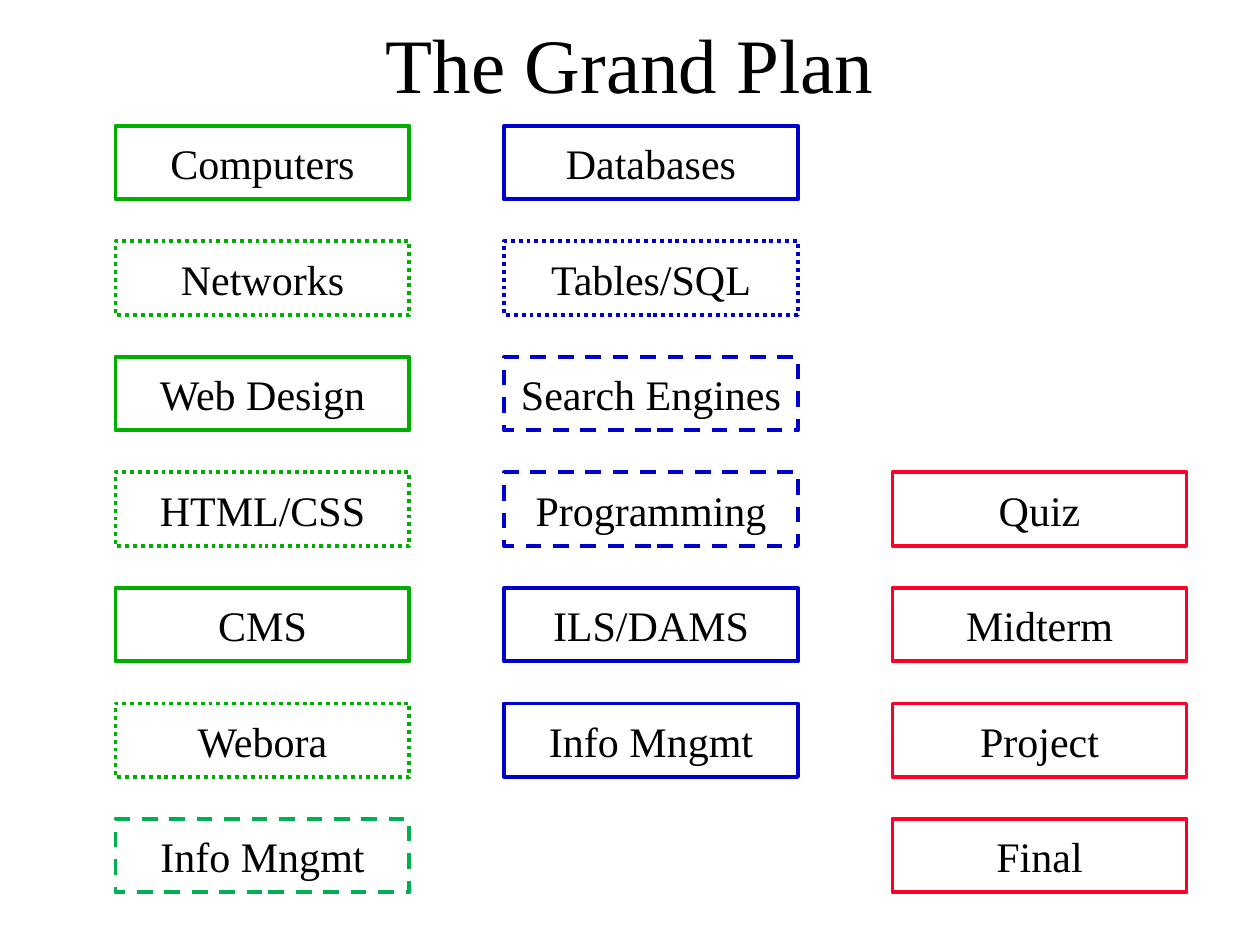
from pptx import Presentation
from pptx.dml.color import RGBColor
from pptx.enum.dml import MSO_LINE_DASH_STYLE as Dash
from pptx.enum.shapes import MSO_SHAPE as Shape
from pptx.enum.text import MSO_ANCHOR as Anchor, PP_ALIGN as Align
from pptx.util import Emu, Pt

PX = 7620  # EMU per px, 120 px to the inch
FONT = "Times New Roman"
COLORS = {
    "text": "000000",
    "green": "00AE00",
    "next": "00B050",
    "blue": "0000CC",
    "red": "FC0128",
}
DASHES = {"solid": None, "dot": Dash.ROUND_DOT, "dash": Dash.DASH}

TITLE_BOX = (90, 20, 1020, 80)
BOX_W, BOX_H = 280, 70
ROW_STEP = 110

# Each column: area on the slide, then its topics as (label, colour, line style)
COLUMNS = [
    ((110, 120, BOX_W, 730), [
        ("Computers", "green", "solid"),
        ("Networks", "green", "dot"),
        ("Web Design", "green", "solid"),
        ("HTML/CSS", "green", "dot"),
        ("CMS", "green", "solid"),
        ("Webora", "green", "dot"),
        ("Info Mngmt", "next", "dash"),
    ]),
    ((480, 120, BOX_W, 620), [
        ("Databases", "blue", "solid"),
        ("Tables/SQL", "blue", "dot"),
        ("Search Engines", "blue", "dash"),
        ("Programming", "blue", "dash"),
        ("ILS/DAMS", "blue", "solid"),
        ("Info Mngmt", "blue", "solid"),
    ]),
    ((850, 450, BOX_W, 400), [
        (label, "red", "solid")
        for label in ("Quiz", "Midterm", "Project", "Final")
    ]),
]


def px(*lengths):
    return [Emu(n * PX) for n in lengths]


def rgb(name):
    return RGBColor.from_string(COLORS[name])


def set_text(sp, text, size, wrap):
    tf = sp.text_frame
    frame_format = {"word_wrap": wrap, "vertical_anchor": Anchor.MIDDLE}
    for name, value in frame_format.items():
        setattr(tf, name, value)
    p = tf.paragraphs[0]
    p.alignment = Align.CENTER
    r = p.add_run()
    r.text = text
    for name, value in {"name": FONT, "size": Pt(size), "bold": False}.items():
        setattr(r.font, name, value)
    r.font.color.rgb = rgb("text")


def add_title(slide, box, text):
    sp = slide.shapes.title
    sp.left, sp.top, sp.width, sp.height = px(*box)
    set_text(sp, text, 44, True)


def add_topic(slide, box, label, color, style):
    sp = slide.shapes.add_shape(Shape.RECTANGLE, *px(*box))
    sp.shadow.inherit = False
    sp.fill.background()
    sp.line.color.rgb = rgb(color)
    sp.line.width = Pt(2.25)
    if DASHES[style]:
        sp.line.dash_style = DASHES[style]
    set_text(sp, label, 24, False)


def add_column(slide, box, topics):
    left, top, width, _ = box
    for row, topic in enumerate(topics):
        add_topic(slide, (left, top + row * ROW_STEP, width, BOX_H), *topic)


def main():
    prs = Presentation()
    prs.slide_width, prs.slide_height = px(1200, 900)
    slide = prs.slides.add_slide(prs.slide_layouts[5])

    # Title
    add_title(slide, TITLE_BOX, "The Grand Plan")

    # Course topics and assessments
    for box, topics in COLUMNS:
        add_column(slide, box, topics)

    prs.save("out.pptx")


if __name__ == "__main__":
    main()
